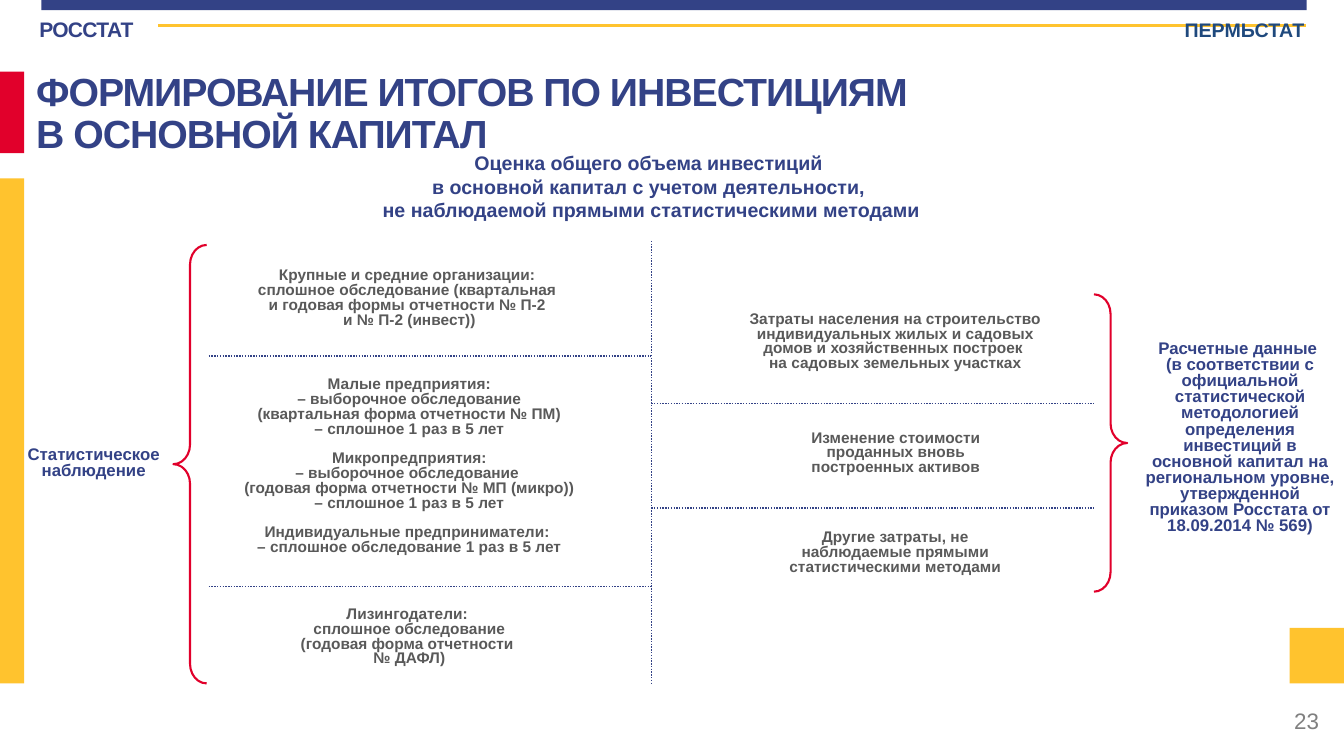
from pptx import Presentation
from pptx.util import Inches, Pt
from pptx.dml.color import RGBColor
from pptx.enum.dml import MSO_LINE
from pptx.enum.shapes import MSO_CONNECTOR, MSO_SHAPE as Kind
from pptx.enum.text import MSO_ANCHOR as Anchor, PP_ALIGN as Align
from lxml import etree

HUES = {"navy": "334286", "red": "E1002B", "gold": "FFC32E",
        "gray": "595959", "pale": "808080", "blue": "1F497D"}

deck = Presentation()
deck.slide_width = Inches(13.33)
deck.slide_height = Inches(7.5)
slide = deck.slides.add_slide(deck.slide_layouts[6])
shapes = slide.shapes


def hue(name):
    return RGBColor.from_string(HUES[name])


def add_text(spot, parts, size, color, align=Align.CENTER, lead=None,
             bold=True, track=0, gap=0):
    box = shapes.add_textbox(*map(Inches, spot))
    frame = box.text_frame
    frame.word_wrap = True
    for i, part in enumerate(parts):
        para = frame.paragraphs[0] if i == 0 else frame.add_paragraph()
        para.alignment = align
        if lead:
            para.line_spacing = lead
        if i:
            para.space_before = Pt(gap)
        for j, line in enumerate(part.split("\n")):
            if j:
                para.add_line_break()
            run = para.add_run()
            run.text = line
            font = run.font
            font.name = "Arial"
            font.size = Pt(size)
            font.bold = bold
            font.color.rgb = hue(color)
            if track:
                run._r.get_or_add_rPr().set("spc", str(track))
    return frame


bars = [
    ((0.41, 0, 12.55, 0.1), "navy"),
    ((0, 0.71, 0.24, 0.81), "red"),
    ((0, 1.77, 0.24, 5.01), "gold"),
    ((12.79, 6.23, 0.54, 0.55), "gold"),
]
for spot, color in bars:
    bar = shapes.add_shape(Kind.RECTANGLE, *map(Inches, spot))
    bar.shadow.inherit = False
    bar.fill.solid()
    bar.fill.fore_color.rgb = hue(color)
    bar.line.fill.background()

rules = [
    ((1.57, 0.25, 12.95, 0.25), "gold", 2),
    ((6.46, 2.39, 6.46, 6.78), "navy", 1),
    ((2.07, 3.53, 6.46, 3.53), "navy", 1),
    ((2.07, 5.82, 6.46, 5.82), "navy", 1),
    ((6.46, 4, 10.85, 4), "navy", 1),
    ((6.46, 5.04, 10.85, 5.04), "navy", 1),
]
for ends, color, width in rules:
    rule = shapes.add_connector(MSO_CONNECTOR.STRAIGHT, *map(Inches, ends))
    rule.line.color.rgb = hue(color)
    rule.line.width = Pt(width)
    if color == "navy":
        rule.line.dash_style = MSO_LINE.ROUND_DOT
    props = rule._element.spPr
    etree.SubElement(props, props.tag.split("}")[0].replace(
        "presentationml", "drawingml") [0:0] +
        "{http://schemas.openxmlformats.org/drawingml/2006/main}effectLst")

braces = [
    (Kind.RIGHT_BRACE, (10.85, 2.92, 0.33, 2.95)),
    (Kind.LEFT_BRACE, (1.72, 2.43, 0.33, 4.35)),
]
for kind, spot in braces:
    brace = shapes.add_shape(kind, *map(Inches, spot))
    brace.shadow.inherit = False
    brace.fill.background()
    brace.line.color.rgb = hue("red")
    brace.line.width = Pt(1.5)
    brace.adjustments[0] = 0.59
    brace.adjustments[1] = 0.5

head = add_text((0.39, 0.13, 1.15, 0.32), ["РОССТАТ"], 15, "navy",
                Align.LEFT, track=-50)
head.margin_left = head.margin_right = head.margin_bottom = 0
head.margin_top = Inches(0.03)
add_text((11.65, 0.09, 1.53, 0.34), ["ПЕРМЬСТАТ"], 14, "blue",
         Align.LEFT, 1.15)
add_text((0.26, 0.67, 13.05, 1.01),
         ["ФОРМИРОВАНИЕ ИТОГОВ ПО ИНВЕСТИЦИЯМ \nВ ОСНОВНОЙ КАПИТАЛ"],
         28, "navy", Align.LEFT, 0.9, track=-70)
add_text((3.37, 1.45, 6.18, 0.81),
         ["Оценка общего объема инвестиций \n"
          "в основной капитал с учетом деятельности, \n"
          "не наблюдаемой прямыми статистическими методами"], 14, "navy")
page = add_text((10.18, 6.95, 3, 0.4), ["23"], 16, "pale", Align.RIGHT,
                bold=False)
page.vertical_anchor = Anchor.MIDDLE

notes = [
    ((2.32, 2.62, 3.48, 0.69),
     ["Крупные и средние организации: \n"
      "сплошное обследование (квартальная \n"
      "и годовая формы отчетности № П-2 \nи № П-2 (инвест))"]),
    ((2.32, 3.7, 3.48, 1.88),
     ["Малые предприятия:\n– выборочное обследование\n"
      "(квартальная форма отчетности № ПМ)\n– сплошное 1 раз в 5 лет",
      "Микропредприятия:\n– выборочное обследование \n"
      "(годовая форма отчетности № МП (микро))\n– сплошное 1 раз в 5 лет",
      "Индивидуальные предприниматели: \n"
      "– сплошное обследование 1 раз в 5 лет"]),
    ((2.55, 5.98, 3.02, 0.69),
     ["Лизингодатели: \nсплошное обследование\n"
      "(годовая форма отчетности \n№ ДАФЛ)"]),
    ((7.22, 3.05, 3.32, 0.69),
     ["Затраты населения на строительство индивидуальных жилых и садовых "
      "домов и хозяйственных построек \nна садовых земельных участках"]),
    ((7.6, 4.23, 2.57, 0.55),
     ["Изменение стоимости проданных вновь построенных активов"]),
    ((7.5, 5.22, 2.76, 0.55),
     ["Другие затраты, не наблюдаемые прямыми статистическими методами"]),
]
for spot, parts in notes:
    add_text(spot, parts, 11, "gray", lead=0.8, gap=10.5)

sides = [
    ((0.11, 4.39, 1.64, 0.42), "Статистическое наблюдение"),
    ((11.23, 3.34, 2.14, 2.04),
     "Расчетные данные \n(в соответствии с официальной статистической "
     "методологией определения инвестиций в основной капитал на "
     "региональном уровне, утвержденной приказом Росстата от "
     "18.09.2014 № 569)"),
]
for spot, words in sides:
    add_text(spot, [words], 12, "navy", lead=0.8)

deck.save("out.pptx")
